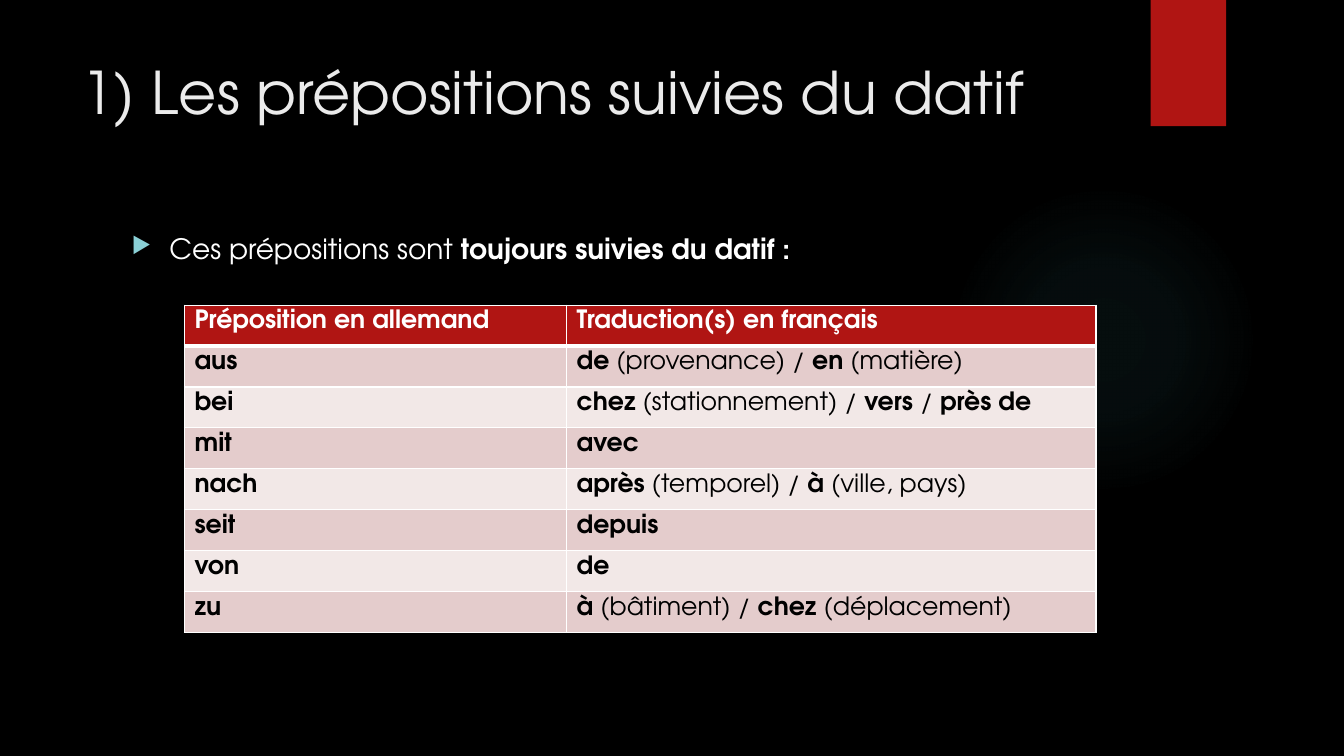
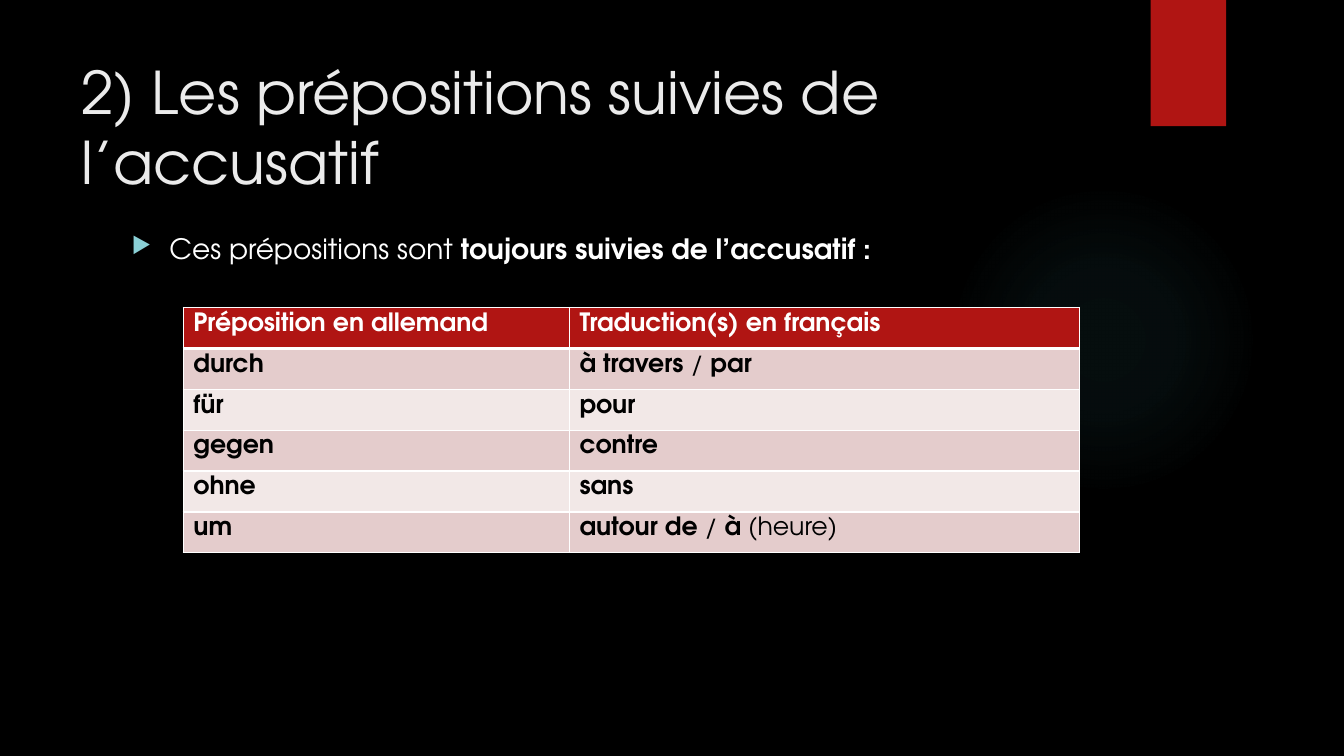
"""Two slides on German prepositions: a title, a bullet and a translation table."""
import pptx
import pptx.util
import pptx.dml.color
import pptx.enum.shapes
import pptx.oxml
import pptx.oxml.ns

Cm, Pt = pptx.util.Cm, pptx.util.Pt
RGB = pptx.dml.color.RGBColor.from_string
SHAPE = pptx.enum.shapes.MSO_SHAPE
FONT = "TeX Gyre Adventor"
COLORS = {
    "background": "000000",
    "accent": "B01513",
    "glow": "50B9C1",
    "title": "EBEBEB",
    "white": "FFFFFF",
    "bullet": "8AD0D6",
    "cell_text": "000000",
    "odd_row": "E4CCCC",
    "even_row": "F2E8E7",
}
HEADER = ("**Préposition en allemand**", "**Traduction(s) en français**")
SLIDES = [
    {
        "title": "1) Les prépositions suivies du datif",
        "body": "Ces prépositions sont **toujours suivies du datif :**",
        "body_size": (24.84, 12.98),
        "table_at": (4.65, 7.69),
        "cols": (9.63, 13.34),
        "rows": [
            ("**aus**", "**de** (provenance) / **en** (matière)"),
            ("**bei**", "**chez** (stationnement) / **vers **/** près de**"),
            ("**mit**", "**avec**"),
            ("**nach**", "**après** (temporel) / **à** (ville, pays)"),
            ("**seit**", "**depuis**"),
            ("**von**", "**de**"),
            ("**zu**", "**à** (bâtiment) / **chez** (déplacement)"),
        ],
    },
    {
        "title": "2) Les prépositions suivies de l’accusatif",
        "body": "Ces prépositions sont **toujours suivies de l’accusatif :**",
        "body_size": (27.91, 11.66),
        "table_at": (4.62, 7.75),
        "cols": (9.73, 12.85),
        "rows": [
            ("**durch**", "**à travers** / **par**"),
            ("**für**", "**pour**"),
            ("**gegen**", "**contre**"),
            ("**ohne**", "**sans**"),
            ("**um**", "**autour de **/ **à** (heure)"),
        ],
    },
]
ROW_HEIGHT = 1.03


def element(xml):
    """Build one DrawingML element from its markup without the namespace."""
    tag, rest = xml[:xml.index(" ")], xml[xml.index(" "):]
    return pptx.oxml.parse_xml(tag + " " + pptx.oxml.ns.nsdecls("a") + rest)


def write(text, tf, size, color, bullet=None):
    """Write text into a frame, with the parts between ** in bold."""
    tf.word_wrap = True
    p = tf.paragraphs[0]
    if bullet:
        pPr = p._p.get_or_add_pPr()
        pPr.set("marL", str(Cm(0.95)))
        pPr.set("indent", str(-Cm(0.95)))
        pPr.append(element(f'<a:buClr ><a:srgbClr val="{COLORS["bullet"]}"/></a:buClr>'))
        pPr.append(element('<a:buSzPct val="80000"/>'))
        pPr.append(element('<a:buFont typeface="OpenSymbol"/>'))
        pPr.append(element(f'<a:buChar char="{bullet}"/>'))
    for i, part in enumerate(text.split("**")):
        if part:
            r = p.add_run()
            r.text = part
            r.font.name = FONT
            r.font.size = Pt(size)
            r.font.bold = i % 2 == 1
            r.font.color.rgb = RGB(COLORS[color])


prs = pptx.Presentation()
prs.slide_width, prs.slide_height = Cm(33.87), Cm(19.05)
bg = prs.slide_master.background.fill
bg.solid()
bg.fore_color.rgb = RGB(COLORS["background"])

for content in SLIDES:
    s = prs.slides.add_slide(prs.slide_layouts[6])

    glow = s.shapes.add_shape(SHAPE.OVAL, Cm(23.9), Cm(4.65), Cm(7.82), Cm(7.82))
    glow.shadow.inherit = False
    glow.line.fill.background()
    glow.fill.background()
    stops = "".join(
        f'<a:gs pos="{pos}000"><a:srgbClr val="{COLORS["glow"]}">'
        f'<a:alpha val="{alpha}000"/></a:srgbClr></a:gs>'
        for pos, alpha in ((0, 7), (36, 6), (69, 0))
    )
    spPr = glow._element.spPr
    spPr.replace(spPr.find(pptx.oxml.ns.qn("a:noFill")), element(
        f'<a:gradFill rotWithShape="1"><a:gsLst>{stops}</a:gsLst><a:path path="circle">'
        '<a:fillToRect l="50000" t="50000" r="50000" b="50000"/></a:path></a:gradFill>'
    ))

    tab = s.shapes.add_shape(SHAPE.RECTANGLE, Cm(29), 0, Cm(1.9), Cm(3.18))
    tab.fill.solid()
    tab.fill.fore_color.rgb = RGB(COLORS["accent"])
    tab.line.fill.background()
    tab.shadow.inherit = False
    tab._element.spPr.find(pptx.oxml.ns.qn("a:effectLst")).append(element(
        f'<a:outerShdw blurRad="{Pt(3)}" dist="{Pt(2)}" dir="5400000" rotWithShape="0">'
        '<a:srgbClr val="000000"><a:alpha val="45000"/></a:srgbClr></a:outerShdw>'
    ))

    title = s.shapes.add_textbox(Cm(1.8), Cm(1.27), Cm(26.14), Cm(3.89))
    write(content["title"], title.text_frame, size=42, color="title")

    width, height = content["body_size"]
    body = s.shapes.add_textbox(Cm(3.07), Cm(5.72), Cm(width), Cm(height))
    write(content["body"], body.text_frame, size=20, color="white", bullet="▶")

    rows = [HEADER] + content["rows"]
    left, top = content["table_at"]
    table = s.shapes.add_table(
        len(rows), len(HEADER), Cm(left), Cm(top),
        Cm(sum(content["cols"])), Cm(ROW_HEIGHT * len(rows)),
    ).table
    table.first_row = table.horz_banding = False
    for col, width in zip(table.columns, content["cols"]):
        col.width = Cm(width)
    for i, texts in enumerate(rows):
        table.rows[i].height = Cm(ROW_HEIGHT)
        fill = "accent" if i == 0 else "odd_row" if i % 2 else "even_row"
        for j, text in enumerate(texts):
            cell = table.cell(i, j)
            cell.margin_top, cell.margin_bottom = Cm(0.13), 0
            for side in "LRTB":
                thick = (i, side) in ((0, "B"), (1, "T"))
                cell._tc.get_or_add_tcPr().append(element(
                    f'<a:ln{side} w="{Pt(3 if thick else 1)}"><a:solidFill>'
                    f'<a:srgbClr val="{COLORS["white"]}"/></a:solidFill></a:ln{side}>'
                ))
            cell.fill.solid()
            cell.fill.fore_color.rgb = RGB(COLORS[fill])
            write(text, cell.text_frame, size=18, color="cell_text" if i else "white")

prs.save("out.pptx")
